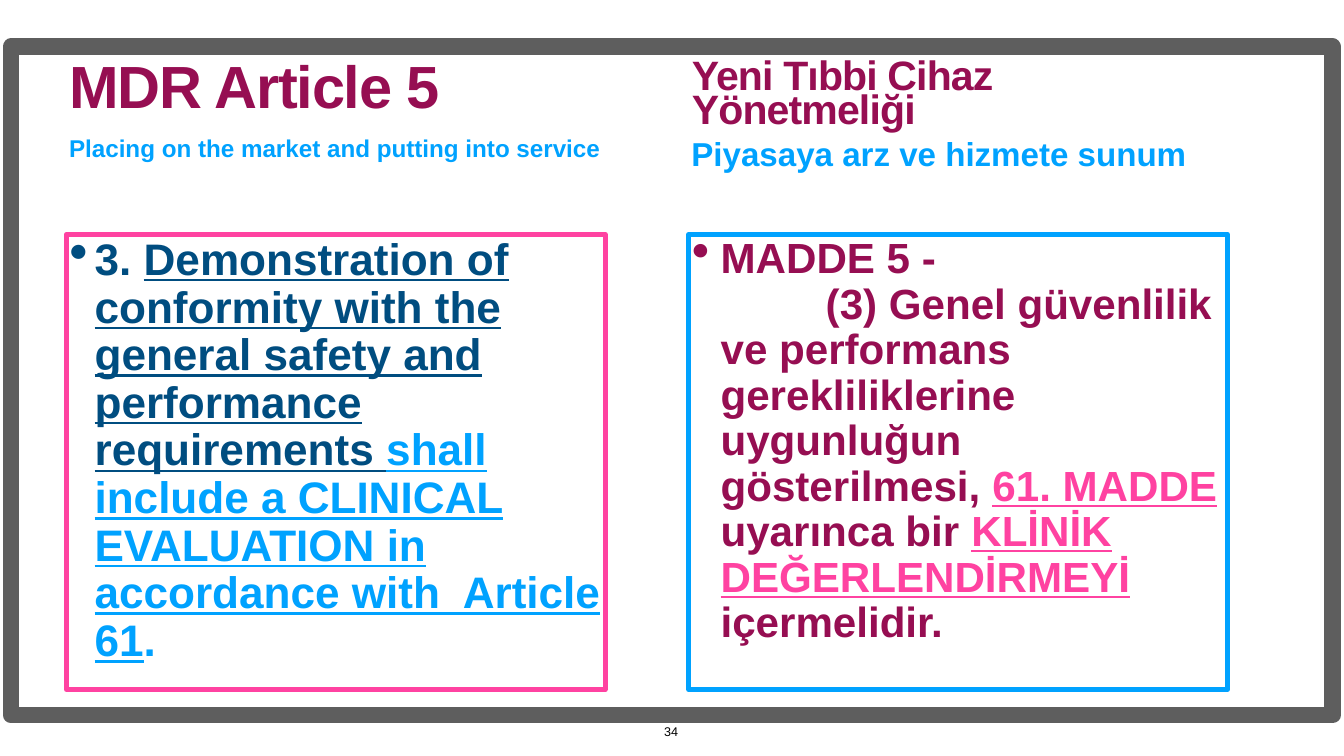
from lxml.etree import SubElement as Sub
from pptx import Presentation
from pptx.dml.color import RGBColor
from pptx.enum.shapes import MSO_SHAPE as Kind
from pptx.enum.text import MSO_ANCHOR as Anchor, PP_ALIGN as Align
from pptx.oxml.ns import qn
from pptx.util import Cm, Pt

PLUM = RGBColor(0x96, 0x0E, 0x52)
SKY = RGBColor(0x00, 0xA2, 0xFF)
NAVY = RGBColor(0x00, 0x4D, 0x80)
PINK = RGBColor(0xFF, 0x42, 0xA1)
GREY = RGBColor(0x5E, 0x5E, 0x5E)
BLACK = RGBColor(0, 0, 0)


def write(para, text, size, color, bold=True, under=False, track=0):
    """Add one formatted run to a paragraph."""
    run = para.add_run()
    run.text = text
    font = run.font
    font.name, font.size, font.bold = "Arial", Pt(size), bold
    font.color.rgb = color
    if under:
        font.underline = True
    if track:
        run._r.get_or_add_rPr().set("spc", str(round(track * 100)))


def setup(frame, pad=0.15, wrap=True, anchor=Anchor.TOP):
    """Set padding, wrap and anchor, and return the first paragraph."""
    frame.margin_left = frame.margin_right = Cm(pad)
    frame.margin_top = frame.margin_bottom = Cm(pad)
    frame.word_wrap, frame.vertical_anchor = wrap, anchor
    para = frame.paragraphs[0]
    para.alignment = Align.LEFT
    return para


def label(slide, box, pad=0.15, **opts):
    """Add a text box and return its first paragraph."""
    shape = slide.shapes.add_textbox(*map(Cm, box))
    return setup(shape.text_frame, pad, **opts)


def border(slide, box, color, width):
    """Add an unfilled rectangle with a coloured line."""
    shape = slide.shapes.add_shape(Kind.RECTANGLE, *map(Cm, box))
    shape.shadow.inherit = False
    shape.fill.background()
    shape.line.color.rgb = color
    shape.line.width = Pt(width)
    return shape


def indent(para, left, first, dot=False):
    """Set the hanging or first-line indent, with an optional bullet."""
    props = para._p.get_or_add_pPr()
    props.set("marL", str(Cm(left)))
    props.set("indent", str(Cm(first)))
    if dot:
        Sub(props, qn("a:buSzPct")).set("val", "123000")
        Sub(props, qn("a:buChar")).set("char", "•")
    else:
        Sub(props, qn("a:buNone"))


def column(slide, box, title, sub, edge, size, left, parts):
    """Place a title, a subtitle and a bordered clause in the box."""
    x, y, w, h = box
    text, pts, space, track = title
    para = label(slide, (x, y, w, 4))
    para.line_spacing = space
    write(para, text, pts, PLUM, track=track)
    write(label(slide, (x, y + 3.6, w, 2.6), 0.13), *sub, SKY)
    shape = border(slide, (x, y + 8.81, w, h - 8.81), edge, 7)
    frame = shape.text_frame
    para = setup(frame)
    for i, (first, runs) in enumerate(parts):
        if i:
            para = frame.add_paragraph()
            para.alignment = Align.LEFT
            para.space_before = Pt(0)
        para.line_spacing = 0.9
        indent(para, left, first, dot=not i)
        for words, color, under in runs:
            write(para, words, size, color, under=under)


def main():
    """Build the slide and save it."""
    deck = Presentation()
    deck.slide_width, deck.slide_height = Cm(67.74), Cm(38.1)
    slide = deck.slides.add_slide(deck.slide_layouts[6])
    border(slide, (0.56, 2.36, 66.6, 33.68), GREY, 24)
    english = [(-1.27, [
        ("3. ", NAVY, False),
        ("Demonstration of conformity with the general safety and "
         "performance requirements ", NAVY, True),
        ("shall include a CLINICAL EVALUATION in accordance with  "
         "Article 61", SKY, True),
        (".", SKY, False)])]
    turkish = [
        (-1.45, [("MADDE 5 -", PLUM, False)]),
        (5.3, [
            ("(3) Genel güvenlilik ve performans gerekliliklerine "
             "uygunluğun gösterilmesi, ", PLUM, False),
            ("61. MADDE", PINK, True),
            (" uyarınca bir ", PLUM, False),
            ("KLİNİK DEĞERLENDİRMEYİ", PINK, True),
            (" içermelidir.", PLUM, False)])]
    column(slide, (3.35, 3, 27.15, 31.75),
           ("MDR Article 5", 85, 0.8, -1.7),
           ("Placing on the market and putting into service", 34.6),
           PINK, 63, 1.27, english)
    column(slide, (34.72, 3, 27.15, 31.75),
           ("Yeni Tıbbi Cihaz Yönetmeliği", 58.6, 0.7, -1.2),
           ("Piyasaya arz ve hizmete sunum", 47.3),
           SKY, 60.2, 1.45, turkish)
    page = label(slide, (33.32, 36.35, 1.02, 1.04), wrap=False,
                 anchor=Anchor.BOTTOM)
    page.alignment = Align.CENTER
    write(page, "34", 18, BLACK, bold=False)
    deck.save("out.pptx")


if __name__ == "__main__":
    main()
